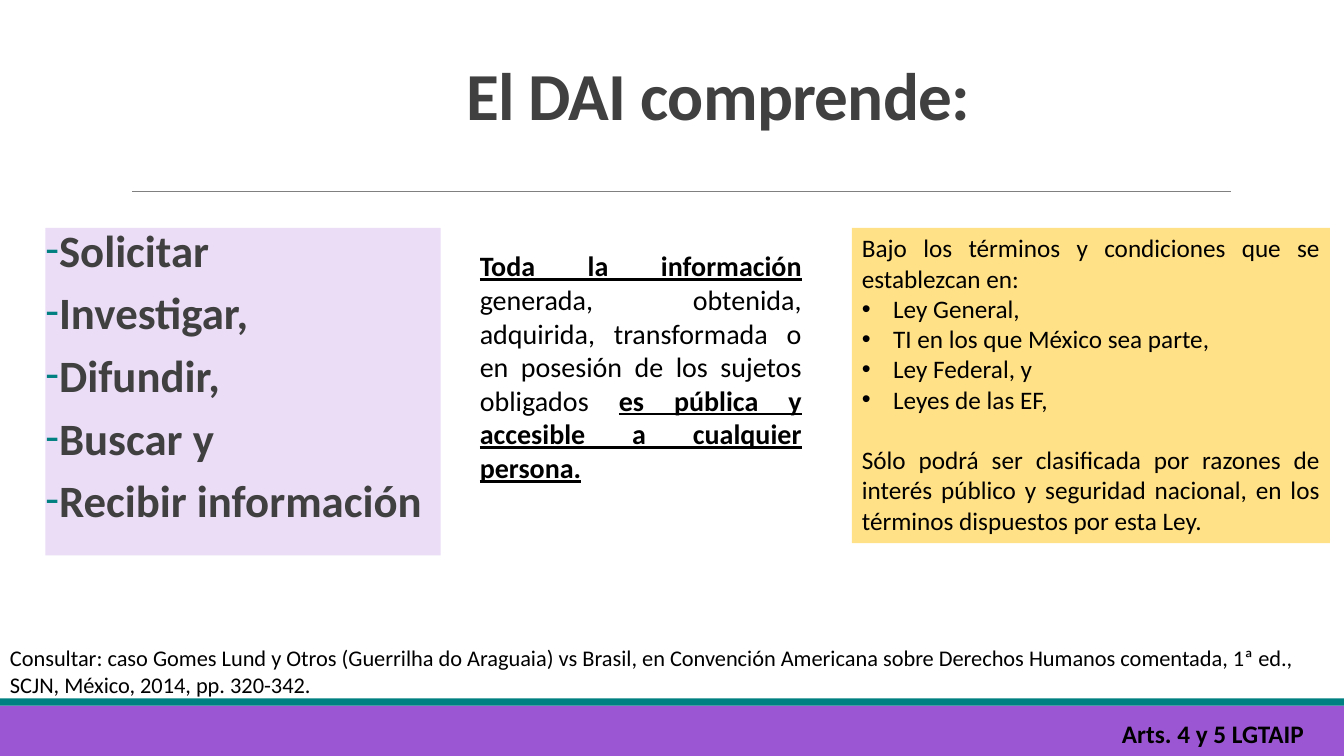
from lxml import etree
from pptx import Presentation
from pptx.dml.color import RGBColor
from pptx.enum.shapes import MSO_CONNECTOR, MSO_SHAPE
from pptx.enum.text import MSO_ANCHOR, PP_ALIGN
from pptx.oxml.ns import qn
from pptx.util import Inches, Pt

RECT = MSO_SHAPE.RECTANGLE
LINE = MSO_CONNECTOR.STRAIGHT
TOP, BOTTOM = MSO_ANCHOR.TOP, MSO_ANCHOR.BOTTOM
LEFT, CENTER, JUSTIFY = PP_ALIGN.LEFT, PP_ALIGN.CENTER, PP_ALIGN.JUSTIFY

PURPLE = RGBColor(0x9B, 0x57, 0xD3)
LILAC = RGBColor(0xEB, 0xDD, 0xF6)
TEAL = RGBColor(0x00, 0x80, 0x80)
GOLD = RGBColor(0xFF, 0xC0, 0x00)
GRAY = RGBColor(0x80, 0x80, 0x80)
DARK = RGBColor(0x40, 0x40, 0x40)
BLACK = RGBColor(0x00, 0x00, 0x00)

ACTIONS = ["Solicitar", "Investigar,", "Difundir,", "Buscar y", "Recibir información"]
LAWS = ["Ley General,", "TI en los que México sea parte,", "Ley Federal, y", "Leyes de las EF,"]
TERMS = "Bajo los términos y condiciones que se establezcan en:"
LIMITS = ("Sólo podrá ser clasificada por razones de interés público y seguridad nacional, "
          "en los términos dispuestos por esta Ley.")
SOURCE = ("Consultar: caso Gomes Lund y Otros (Guerrilha do Araguaia) vs Brasil, "
          "en Convención Americana sobre Derechos Humanos comentada, 1ª ed., "
          "SCJN, México, 2014, pp. 320-342.")


def style(target, values):
    for name, value in values.items():
        setattr(target, name, value)


def add_rect(slide, box, color, alpha=None):
    shape = slide.shapes.add_shape(RECT, *map(Inches, box))
    shape.shadow.inherit = False
    shape.fill.solid()
    shape.fill.fore_color.rgb = color
    shape.line.fill.background()
    if alpha:
        tint = shape.fill._xPr.find(".//" + qn("a:srgbClr"))
        etree.SubElement(tint, qn("a:alpha"), val=str(alpha * 1000))
    return shape


def add_rule(slide, left, right, top):
    rule = slide.shapes.add_connector(LINE, *map(Inches, (left, top, right, top)))
    rule.line.color.rgb = GRAY
    rule.line.width = Pt(0.5)
    etree.SubElement(rule._element.spPr, qn("a:effectLst"))


def add_text(slide, box):
    return slide.shapes.add_textbox(*map(Inches, box))


def set_frame(shape, side=0.1, anchor=TOP):
    frame = shape.text_frame
    style(frame, {"word_wrap": True, "vertical_anchor": anchor,
                  "margin_left": Inches(side), "margin_right": Inches(side)})
    return frame


def add_bullet(para, mark, indent, color=None):
    props = para._p.get_or_add_pPr()
    props.set("marL", str(Inches(indent)))
    props.set("indent", str(-Inches(indent)))
    if color:
        tint = etree.SubElement(props, qn("a:buClr"))
        etree.SubElement(tint, qn("a:srgbClr"), val=str(color))
    etree.SubElement(props, qn("a:buFont"), typeface="Arial" if mark == "•" else "Calibri")
    etree.SubElement(props, qn("a:buChar"), char=mark)


def add_para(frame, runs, size, color=BLACK, **layout):
    first = not frame.paragraphs[0].runs
    para = frame.paragraphs[0] if first else frame.add_paragraph()
    style(para, layout)
    for text, strong, under in runs:
        run = para.add_run()
        run.text = text
        style(run.font, {"name": "Calibri", "size": Pt(size),
                         "bold": strong, "underline": under})
        run.font.color.rgb = color
    return para


def add_title(slide):
    frame = set_frame(add_text(slide, (2.05, 0.49, 10.15, 0.89)), anchor=BOTTOM)
    para = add_para(frame, [("El DAI comprende:", True, False)], 48, DARK,
                    alignment=CENTER, line_spacing=0.85)
    para.runs[0]._r.get_or_add_rPr().set("spc", "-50")


def add_actions(slide):
    frame = set_frame(add_rect(slide, (0.45, 2.26, 3.92, 3.25), LILAC), side=0)
    for rank, text in enumerate(ACTIONS):
        para = add_para(frame, [(text, True, False)], 32, DARK, alignment=LEFT,
                        line_spacing=0.8, space_after=Pt(2),
                        space_before=Pt(12 if rank else 0))
        add_bullet(para, "-", 0.1, TEAL)


def add_terms(slide):
    frame = set_frame(add_rect(slide, (8.45, 2.26, 4.74, 3.13), GOLD, alpha=47))
    add_para(frame, [(TERMS, False, False)], 18, alignment=JUSTIFY)
    for text in LAWS:
        para = add_para(frame, [(text, False, False)], 18, alignment=JUSTIFY)
        add_bullet(para, "•", 0.31)
    add_para(frame, [(LIMITS, False, False)], 18, alignment=JUSTIFY, space_before=Pt(21.6))


def add_scope(slide):
    frame = set_frame(add_text(slide, (4.66, 2.42, 3.39, 2.46)))
    runs = [
        ("Toda la información ", True, True),
        ("generada, obtenida, adquirida, transformada o en posesión "
         "de los sujetos obligados ", False, False),
        ("es pública y accesible a cualquier persona.", True, True),
    ]
    add_para(frame, runs, 20, alignment=JUSTIFY)


def add_note(slide, box, text, size, strong=False):
    add_para(set_frame(add_text(slide, box)), [(text, strong, False)], size)


def main():
    deck = Presentation()
    style(deck, {"slide_width": Inches(13.33), "slide_height": Inches(7.5)})
    slide = deck.slides.add_slide(deck.slide_layouts[6])
    add_rect(slide, (0, 7, 13.33, 0.5), PURPLE)
    add_rect(slide, (0, 6.93, 13.33, 0.07), TEAL)
    add_rule(slide, 1.31, 12.21, 1.9)
    add_title(slide)
    add_actions(slide)
    add_terms(slide)
    add_scope(slide)
    add_note(slide, (11.03, 7.08, 2.07, 0.4), "Arts. 4 y 5 LGTAIP", 18, strong=True)
    add_note(slide, (0, 6.34, 13.33, 0.64), SOURCE, 16)
    deck.save("out.pptx")


if __name__ == "__main__":
    main()
